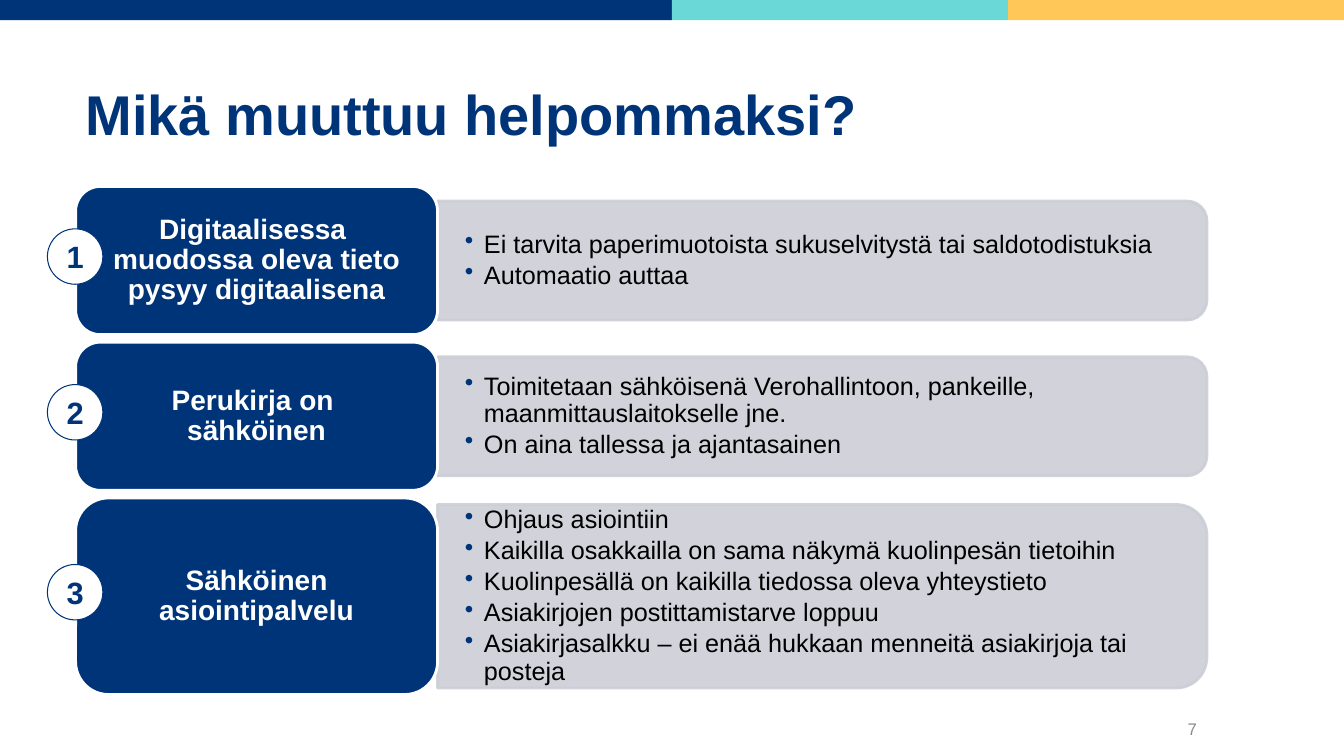
import pptx
import pptx.util
import pptx.dml.color
import pptx.enum.shapes
import pptx.enum.text
import pptx.oxml.ns
from dataclasses import dataclass
from lxml import etree

# Content
TITLE = "Mikä muuttuu helpommaksi?"
PAGE_NUMBER = "7"
# label, label height, panel height, points
ROWS = [
    ("Digitaalisessa \nmuodossa oleva tieto pysyy digitaalisena", 1.47, 1.18, [
        "Ei tarvita paperimuotoista sukuselvitystä tai saldotodistuksia",
        "Automaatio auttaa",
    ]),
    ("Perukirja on \nsähköinen", 1.47, 1.18, [
        "Toimitetaan sähköisenä Verohallintoon, pankeille, maanmittauslaitokselle jne.",
        "On aina tallessa ja ajantasainen",
    ]),
    ("Sähköinen asiointipalvelu", 1.95, 1.82, [
        "Ohjaus asiointiin",
        "Kaikilla osakkailla on sama näkymä kuolinpesän tietoihin",
        "Kuolinpesällä on kaikilla tiedossa oleva yhteystieto",
        "Asiakirjojen postittamistarve loppuu",
        "Asiakirjasalkku – ei enää hukkaan menneitä asiakirjoja tai posteja",
    ]),
]


@dataclass(frozen=True)
class Theme:
    font: str = "Arial"
    navy: str = "003479"
    teal: str = "69D8D7"
    yellow: str = "FFC658"
    panel: str = "CCCED7"
    white: str = "FFFFFF"
    black: str = "000000"
    gray: str = "8C8C8C"
    title_size: int = 40
    number_size: int = 22
    label_size: int = 20
    point_size: int = 18
    page_size: int = 12


theme = Theme()
Inches, Pt = pptx.util.Inches, pptx.util.Pt
Shape = pptx.enum.shapes.MSO_SHAPE
Align = pptx.enum.text.PP_ALIGN
Anchor = pptx.enum.text.MSO_ANCHOR
qn = pptx.oxml.ns.qn

# Grid, in inches
WIDTH, HEIGHT = 13.33, 7.5
LEFT, LABEL_WIDTH, PANEL_WIDTH = 0.75, 3.59, 7.63
PANEL_LEFT = LEFT + LABEL_WIDTH
ROWS_TOP, ROWS_BOTTOM = 1.85, 6.89
ROW_GAP = (ROWS_BOTTOM - ROWS_TOP - sum(row[1] for row in ROWS)) / (len(ROWS) - 1)
CIRCLE, CIRCLE_LEFT, CIRCLE_RISE = 0.55, 0.47, 0.04
STRIPES = [(theme.navy, 0.5), (theme.teal, 0.25), (theme.yellow, 0.25)]
STRIPE_HEIGHT = 0.2

presentation = pptx.Presentation()
presentation.slide_width, presentation.slide_height = Inches(WIDTH), Inches(HEIGHT)
slide = presentation.slides.add_slide(presentation.slide_layouts[6])


def color(value):
    return pptx.dml.color.RGBColor.from_string(value)


def add_shape(kind, left, top, width, height, fill, line=None, line_width=0):
    shape = slide.shapes.add_shape(kind, *map(Inches, (left, top, width, height)))
    shape.shadow.inherit = False
    shape.fill.solid()
    shape.fill.fore_color.rgb = color(fill)
    if line:
        shape.line.color.rgb = color(line)
        shape.line.width = Pt(line_width)
    else:
        shape.line.fill.background()
    return shape


def add_box(left, top, width, height):
    return slide.shapes.add_textbox(*map(Inches, (left, top, width, height)))


def set_opacity(shape, percent):
    for value in shape.element.spPr.iter(qn("a:srgbClr")):
        etree.SubElement(value, qn("a:alpha"), val=str(percent * 1000))


def add_bullet(paragraph, indent):
    properties = paragraph._p.get_or_add_pPr()
    properties.set("marL", str(Inches(indent)))
    properties.set("indent", str(-Inches(indent)))
    bullet_color = etree.SubElement(properties, qn("a:buClr"))
    etree.SubElement(bullet_color, qn("a:srgbClr"), val=theme.navy)
    etree.SubElement(properties, qn("a:buChar"), char="•")


def write(shape, lines, size, text_color, bold=False, anchor=Anchor.MIDDLE,
          margins=(0.1, 0.05), bullet_indent=None, paragraph_format=None):
    frame = shape.text_frame
    across, down = map(Inches, margins)
    frame_format = {"word_wrap": True, "vertical_anchor": anchor,
                    "margin_left": across, "margin_right": across,
                    "margin_top": down, "margin_bottom": down}
    for name, value in frame_format.items():
        setattr(frame, name, value)
    for index, line in enumerate(lines):
        paragraph = frame.add_paragraph() if index else frame.paragraphs[0]
        paragraph.text = line
        if bullet_indent:
            add_bullet(paragraph, bullet_indent)
        for name, value in (paragraph_format or {}).items():
            setattr(paragraph, name, value)
        for run in paragraph.runs:
            run.font.color.rgb = color(text_color)
            for name, value in {"name": theme.font, "size": Pt(size), "bold": bold}.items():
                setattr(run.font, name, value)


# Stripes along the top edge
stripe_left = 0
for stripe_color, share in STRIPES:
    add_shape(Shape.RECTANGLE, stripe_left, 0, share * WIDTH, STRIPE_HEIGHT, stripe_color)
    stripe_left += share * WIDTH

# Title and page number
write(add_box(LEFT, 0.16, 11.22, 1.34), [TITLE], theme.title_size, theme.navy,
      bold=True, anchor=Anchor.BOTTOM)
write(add_box(11.06, 7.11, 0.91, 0.24), [PAGE_NUMBER], theme.page_size, theme.gray,
      paragraph_format={"alignment": Align.RIGHT})

# Rows: panel with points, label, number
row_top = ROWS_TOP
for number, (label, label_height, panel_height, points) in enumerate(ROWS, start=1):
    middle = row_top + label_height / 2

    # The panel is turned a quarter so that its rounded end faces right
    panel = add_shape(Shape.ROUND_2_SAME_RECTANGLE,
                      PANEL_LEFT + (PANEL_WIDTH - panel_height) / 2,
                      middle - PANEL_WIDTH / 2, panel_height, PANEL_WIDTH,
                      theme.panel, theme.panel, 2)
    panel.rotation = 90
    set_opacity(panel, 90)
    write(add_box(PANEL_LEFT, middle - panel_height / 2, PANEL_WIDTH, panel_height),
          points, theme.point_size, theme.black, margins=(0.27, 0.14), bullet_indent=0.19,
          paragraph_format={"line_spacing": 0.9, "space_after": Pt(0.15 * theme.point_size)})

    label_shape = add_shape(Shape.ROUNDED_RECTANGLE, LEFT, row_top, LABEL_WIDTH,
                            label_height, theme.navy, theme.white, 2)
    write(label_shape, [label], theme.label_size, theme.white, bold=True, margins=(0.08, 0.04),
          paragraph_format={"alignment": Align.CENTER, "line_spacing": 0.9})

    circle = add_shape(Shape.FLOWCHART_CONNECTOR, CIRCLE_LEFT,
                       middle - CIRCLE / 2 - CIRCLE_RISE, CIRCLE, CIRCLE,
                       theme.white, theme.navy, 0.75)
    write(circle, [str(number)], theme.number_size, theme.navy, bold=True,
          paragraph_format={"alignment": Align.CENTER})
    row_top += label_height + ROW_GAP

presentation.save("out.pptx")
